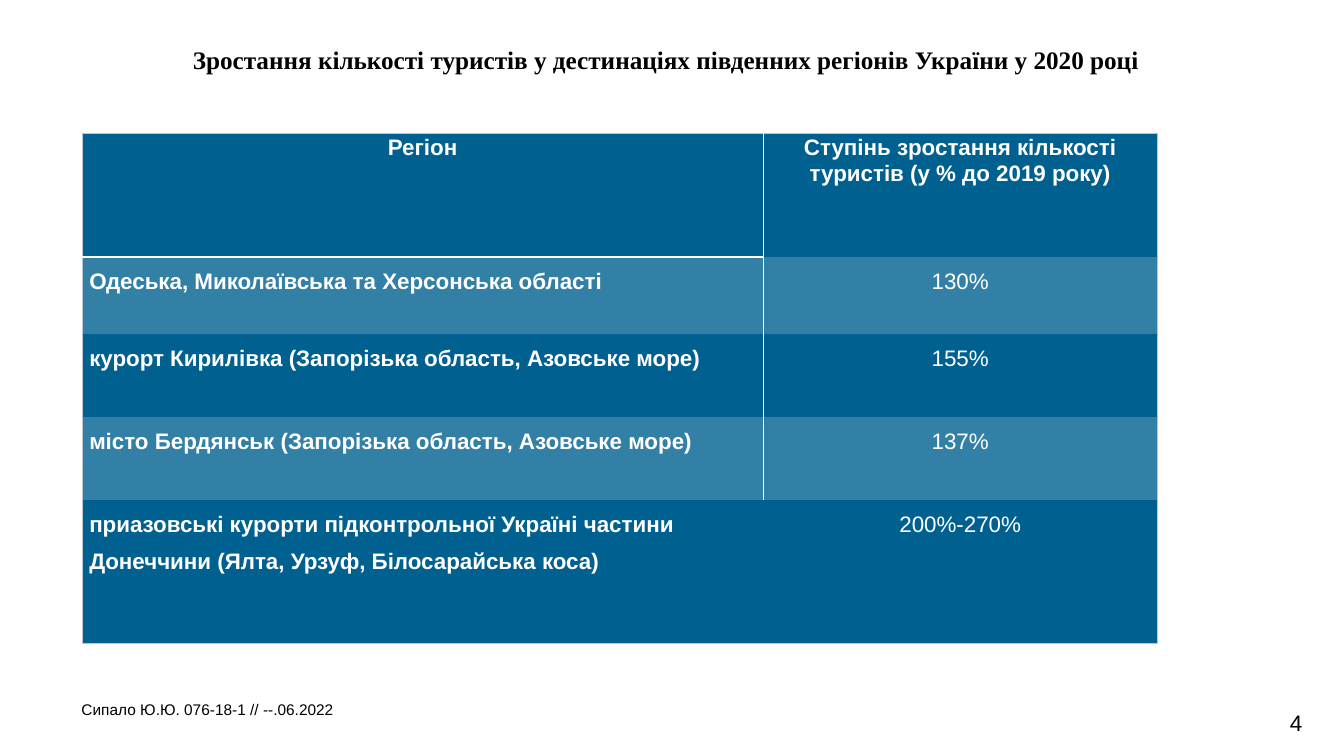
from dataclasses import dataclass

from lxml.etree import SubElement
from pptx import Presentation
from pptx.dml.color import RGBColor
from pptx.enum.text import MSO_ANCHOR, MSO_AUTO_SIZE, PP_ALIGN as Align
from pptx.oxml.ns import qn
from pptx.util import Pt

PX = 9525  # EMU per pixel
BLACK = RGBColor(0x00, 0x00, 0x00)
WHITE = RGBColor(0xFF, 0xFF, 0xFF)
BLUE = RGBColor(0x00, 0x60, 0x90)
LIGHT_BLUE = RGBColor(0x33, 0x80, 0xA6)
OUTLINE = RGBColor(0xBD, 0xC5, 0xD1)
PLAIN_TABLE_STYLE = "{2D5ABB26-0587-4C30-8999-92F81FD0307C}"


@dataclass
class TableRow:
    region: str
    growth: str
    height: int


COLUMN_WIDTHS = (649, 375)
ROWS = (
    TableRow("Регіон", "Ступінь зростання кількості туристів (у % до 2019 року)", 118),
    TableRow("Одеська, Миколаївська та Херсонська області", "130%", 73),
    TableRow("курорт Кирилівка (Запорізька область, Азовське море)", "155%", 79),
    TableRow("місто Бердянськ (Запорізька область, Азовське море)", "137%", 79),
    TableRow("приазовські курорти підконтрольної Україні частини\n"
             "Донеччини (Ялта, Урзуф, Білосарайська коса)", "200%-270%", 137),
)


def place(shape, left: int, top: int, width: int, height: int) -> None:
    shape.left, shape.top = left * PX, top * PX
    shape.width, shape.height = width * PX, height * PX


def format_text(text_frame, size: int, color: RGBColor, align: Align,
                bold: bool = False, font: str = "Arial") -> None:
    for paragraph in text_frame.paragraphs:
        paragraph.alignment = align
        for run in paragraph.runs:
            run.font.name, run.font.size, run.font.bold = font, Pt(size), bold
            run.font.color.rgb = color


def add_border(cell, side: str, color: RGBColor, width: float) -> None:
    line = SubElement(cell._tc.get_or_add_tcPr(), qn(f"a:ln{side}"), w=str(Pt(width)))
    fill = SubElement(line, qn("a:solidFill"))
    SubElement(fill, qn("a:srgbClr"), val=str(color))


def fill_cell(cell, text: str, row: int, column: int) -> None:
    header, last = row == 0, row == len(ROWS) - 1
    cell.margin_left = cell.margin_right = 7 * PX
    cell.margin_top = cell.margin_bottom = 0
    cell.text_frame.text = text
    centred = header or column == 1
    format_text(cell.text_frame, 16, WHITE, Align.CENTER if centred else Align.JUSTIFY,
                bold=header or column == 0)
    for paragraph in cell.text_frame.paragraphs:
        paragraph.line_spacing = 1.07 if header else 1.5
        paragraph.space_after = Pt(8 if header else 0)

    # Borders: grey outline, white divider and white line under the header
    if column == 0:
        add_border(cell, "L", OUTLINE, 0.5)
        if not last:
            add_border(cell, "R", WHITE, 1)
    else:
        add_border(cell, "R", OUTLINE, 0.5)
    if header:
        add_border(cell, "T", OUTLINE, 0.5)
        if column == 0:
            add_border(cell, "B", WHITE, 1.5)
    if last:
        add_border(cell, "B", OUTLINE, 0.5)
    cell.fill.solid()
    cell.fill.fore_color.rgb = LIGHT_BLUE if row % 2 else BLUE


def add_growth_table(slide) -> None:
    frame = slide.shapes.add_table(
        len(ROWS), len(COLUMN_WIDTHS), 78 * PX, 127 * PX,
        sum(COLUMN_WIDTHS) * PX, sum(row.height for row in ROWS) * PX)
    table = frame.table
    table._tbl.tblPr.find(qn("a:tableStyleId")).text = PLAIN_TABLE_STYLE
    table.horz_banding = False
    for column, width in zip(table.columns, COLUMN_WIDTHS):
        column.width = width * PX
    for index, row in enumerate(ROWS):
        table.rows[index].height = row.height * PX
        for column, text in enumerate((row.region, row.growth)):
            fill_cell(table.cell(index, column), text, index, column)


def main() -> None:
    presentation = Presentation()
    presentation.slide_width, presentation.slide_height = 1280 * PX, 720 * PX
    slide = presentation.slides.add_slide(presentation.slide_layouts[1])

    # Title
    title = slide.shapes.title
    place(title, 174, 38, 940, 38)
    title.text_frame.text = ("Зростання кількості туристів у дестинаціях "
                             "південних регіонів України у 2020 році")
    title.text_frame.auto_size = MSO_AUTO_SIZE.NONE
    title.text_frame.vertical_anchor = MSO_ANCHOR.MIDDLE
    format_text(title.text_frame, 18, BLACK, Align.JUSTIFY, True, "Times New Roman")

    # Author line
    author = slide.placeholders[1]
    place(author, 68, 664, 1045, 25)
    author.text_frame.text = "Сипало Ю.Ю. 076-18-1 // --.06.2022"
    author.text_frame.auto_size = MSO_AUTO_SIZE.NONE
    paragraph = author.text_frame.paragraphs[0]
    properties = paragraph._p.get_or_add_pPr()
    properties.set("marL", "0")
    properties.set("indent", "0")
    SubElement(properties, qn("a:buNone"))
    paragraph.line_spacing = 0.9
    paragraph.space_before = Pt(0)
    format_text(author.text_frame, 11, BLACK, Align.LEFT)

    add_growth_table(slide)

    # Page number
    number = slide.shapes.add_textbox(1204 * PX, 671 * PX, 61 * PX, 36 * PX)
    number.text_frame.word_wrap = True
    number.text_frame.text = "4"
    format_text(number.text_frame, 16, BLACK, Align.CENTER)

    presentation.save("out.pptx")


if __name__ == "__main__":
    main()
